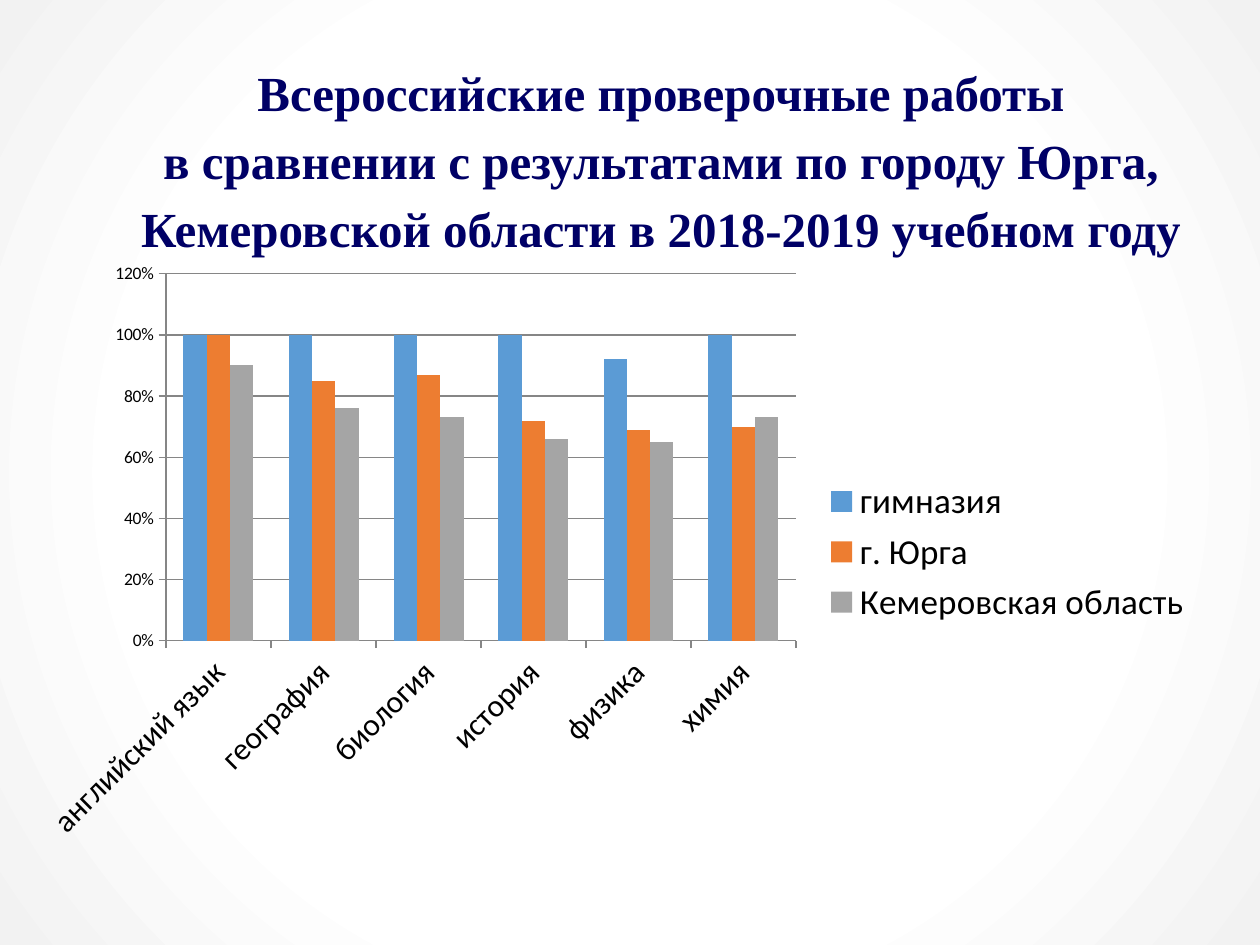
from dataclasses import dataclass
from lxml.etree import SubElement
from pptx import Presentation
from pptx.chart.data import CategoryChartData
from pptx.dml.color import RGBColor
from pptx.enum.chart import XL_CHART_TYPE, XL_LEGEND_POSITION, XL_TICK_MARK
from pptx.enum.shapes import MSO_SHAPE
from pptx.enum.text import MSO_ANCHOR, PP_ALIGN
from pptx.oxml.ns import qn
from pptx.util import Inches, Pt


@dataclass(frozen=True)
class Theme:
    back: str = "FAFAFA"
    glow: tuple = ((0.63, "FFFFFF"), (1, "F2F2F2"))
    title: str = "000066"
    ink: str = "000000"
    grid: str = "868686"
    bars: tuple = ("5B9BD5", "ED7D31", "A5A5A5")
    serif: str = "Times New Roman"
    sans: str = "Calibri"
    head: int = 28
    legend: int = 20
    label: int = 18
    small: int = 10


class Deck:
    """Builds slide elements in one theme."""

    def __init__(self, theme):
        self.theme = theme
        self.file = Presentation()
        self.file.slide_width, self.file.slide_height = Inches(10), Inches(7.5)
        self.slide = self.file.slides.add_slide(self.file.slide_layouts[6])

    def font(self, font, size, color, name, bold=False):
        font.size, font.name, font.bold = Pt(size), name, bold
        font.color.rgb = RGBColor.from_string(color)

    def line(self, line):
        line.width = Pt(0.75)
        line.color.rgb = RGBColor.from_string(self.theme.grid)

    def backdrop(self):
        fill = self.slide.background.fill
        fill.solid()
        fill.fore_color.rgb = RGBColor.from_string(self.theme.back)
        rect = self.slide.shapes.add_shape(
            MSO_SHAPE.RECTANGLE, 0, 0, self.file.slide_width, self.file.slide_height)
        rect.shadow.inherit = False
        rect.line.fill.background()
        rect.fill.gradient()
        for stop, (place, color) in zip(rect.fill.gradient_stops, self.theme.glow):
            stop.position = place
            stop.color.rgb = RGBColor.from_string(color)
        grad = rect.fill._xPr.find(qn("a:gradFill"))
        grad.remove(grad.find(qn("a:lin")))
        ring = SubElement(grad, qn("a:path"), path="circle")
        SubElement(ring, qn("a:fillToRect"), dict.fromkeys("ltrb", "50000"))

    def title(self, lines, left, top, width, height):
        box = self.slide.shapes.add_textbox(*map(Inches, (left, top, width, height)))
        frame = box.text_frame
        frame.word_wrap = True
        frame.vertical_anchor = MSO_ANCHOR.TOP
        frame.margin_top = Inches(0.03)
        para = frame.paragraphs[0]
        para.alignment = PP_ALIGN.CENTER
        para.line_spacing = 1.15
        para.space_after = Pt(10)
        for index, text in enumerate(lines):
            if index:
                para.add_line_break()
            run = para.add_run()
            run.text = text
            self.font(run.font, self.theme.head, self.theme.title, self.theme.serif, True)

    def chart(self, cats, rows, left, top, width, height):
        theme = self.theme
        data = CategoryChartData(number_format="0%")
        data.categories = cats
        for name, values in rows.items():
            data.add_series(name, values)
        chart = self.slide.shapes.add_chart(
            XL_CHART_TYPE.COLUMN_CLUSTERED,
            *map(Inches, (left, top, width, height)), data).chart
        chart.has_title = False
        self.font(chart.font, theme.small, theme.ink, theme.sans)
        plot = chart.plots[0]
        plot.gap_width, plot.overlap, plot.vary_by_categories = 150, 0, False
        for row, color in zip(plot.series, theme.bars):
            row.format.fill.solid()
            row.format.fill.fore_color.rgb = RGBColor.from_string(color)
        sizes = (theme.label, theme.small)
        for axis, size in zip((chart.category_axis, chart.value_axis), sizes):
            axis.major_tick_mark = XL_TICK_MARK.OUTSIDE
            self.line(axis.format.line)
            self.font(axis.tick_labels.font, size, theme.ink, theme.sans)
        chart.category_axis._element.find(qn("c:txPr")).find(qn("a:bodyPr")).set("rot", "-2700000")
        scale = chart.value_axis
        scale.minimum_scale, scale.maximum_scale, scale.major_unit = 0, 1.2, 0.2
        scale.tick_labels.number_format = "0%"
        scale.tick_labels.number_format_is_linked = False
        scale.has_major_gridlines = True
        self.line(scale.major_gridlines.format.line)
        chart.has_legend = True
        chart.legend.position = XL_LEGEND_POSITION.RIGHT
        chart.legend.include_in_layout = False
        self.font(chart.legend.font, theme.legend, theme.ink, theme.sans)


def main():
    deck = Deck(Theme())
    deck.backdrop()
    deck.title(
        ("Всероссийские проверочные работы",
         "в сравнении с результатами по городу Юрга, "
         "Кемеровской области в 2018-2019 учебном году"),
        0.69, 0.4, 9.11, 1.45)
    deck.chart(
        ("английский язык", "география", "биология", "история", "физика", "химия"),
        {"гимназия": (1, 1, 1, 1, 0.92, 1),
         "г. Юрга": (1, 0.85, 0.87, 0.72, 0.69, 0.7),
         "Кемеровская область": (0.9, 0.76, 0.73, 0.66, 0.65, 0.73)},
        0.17, 2, 9.4, 4.76)
    deck.file.save("out.pptx")


if __name__ == "__main__":
    main()
